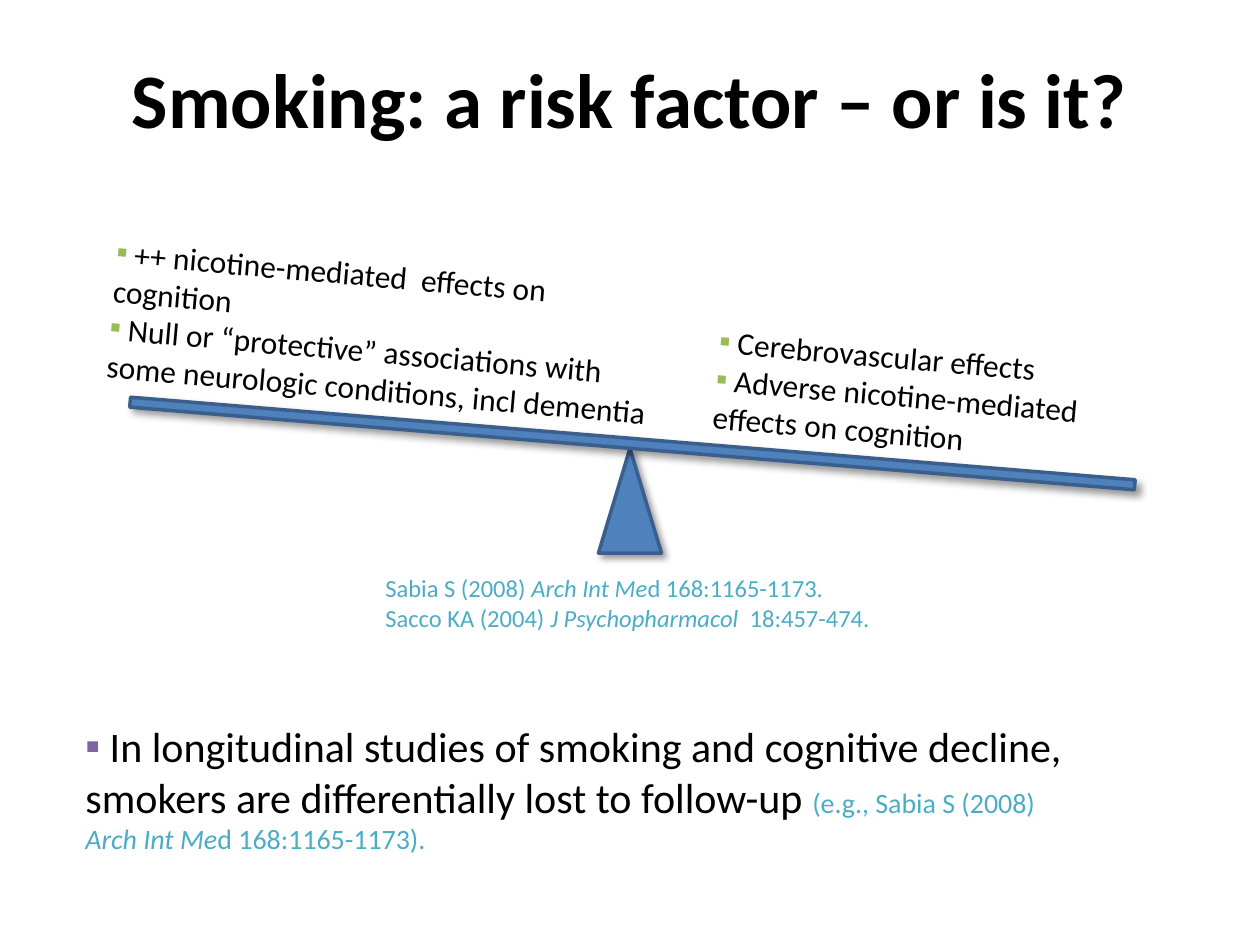
from lxml.etree import SubElement
from pptx import Presentation
from pptx.dml.color import RGBColor
from pptx.enum.shapes import MSO_SHAPE as Preset
from pptx.enum.text import MSO_ANCHOR as Anchor, PP_ALIGN as Align
from pptx.oxml.ns import qn
from pptx.util import Inches, Pt

THEME = {
    "font": "Calibri",
    "text": "000000", "cite": "4BACC6",
    "effect_bullet": "9BBB59", "study_bullet": "8064A2",
    "fill": "4F81BD", "line": "3A5F8C", "shadow": "000000",
    "title_size": 44, "study_size": 24, "effect_size": 18,
    "note_size": 16, "cite_size": 14,
}

TITLE = "Smoking: a risk factor – or is it?"
TITLE_BOX = (0.5, 0.3, 9, 0.95)

SEESAW = [
    (Preset.ISOSCELES_TRIANGLE, (4.75, 3.56, 0.5, 0.83), 0),
    (Preset.RECTANGLE, (1.02, 3.48, 8, 0.08), 4.7),
]

EFFECT = ("effect_size", "text", False)
STUDY = ("study_size", "text", False)
CITE = ("cite_size", "cite", False)
CITE_JOURNAL = ("cite_size", "cite", True)
NOTE = ("note_size", "cite", False)
NOTE_JOURNAL = ("note_size", "cite", True)

TEXTS = [
    ((0.78, 1.99, 4.58, 1.31), 5, "effect_bullet", [
        [(" ++ nicotine-mediated  effects on cognition", EFFECT)],
        [(" Null or “protective” associations with some neurologic conditions, incl dementia", EFFECT)],
    ]),
    ((5.58, 2.66, 3.76, 1.01), 5, "effect_bullet", [
        [(" Cerebrovascular effects", EFFECT)],
        [(" Adverse nicotine-mediated effects on cognition", EFFECT)],
    ]),
    ((2.96, 4.5, 4.12, 0.57), 0, None, [
        [("Sabia S (2008) ", CITE), ("Arch Int Me", CITE_JOURNAL), ("d 168:1165-1173.", CITE)],
        [("Sacco KA (2004) ", CITE), ("J Psychopharmacol  ", CITE_JOURNAL), ("18:457-474.", CITE)],
    ]),
    ((0.58, 5.67, 8.17, 1.58), 0, "study_bullet", [
        [(" In longitudinal studies of smoking and cognitive decline, "
          "smokers are differentially lost to follow-up ", STUDY),
         ("(e.g., Sabia S (2008) ", NOTE), ("Arch Int Me", NOTE_JOURNAL),
         ("d 168:1165-1173).", NOTE)],
    ]),
]


def color(name):
    return RGBColor.from_string(THEME[name])


def inches(box):
    return [Inches(value) for value in box]


def add_run(paragraph, text, size, color_name, italic=False, bold=False):
    run = paragraph.add_run()
    run.text = text
    run.font.name = THEME["font"]
    run.font.size = Pt(THEME[size])
    run.font.color.rgb = color(color_name)
    run.font.italic = italic
    run.font.bold = bold


def add_bullet(paragraph, color_name):
    properties = paragraph._p.get_or_add_pPr()
    bullet_color = SubElement(properties, qn("a:buClr"))
    SubElement(bullet_color, qn("a:srgbClr"), val=THEME[color_name])
    SubElement(properties, qn("a:buFont"), typeface=THEME["font"])
    SubElement(properties, qn("a:buChar"), char="▪")


def add_shadow(shape):
    shape.shadow.inherit = False
    effects = shape._element.spPr.find(qn("a:effectLst"))
    shadow = SubElement(effects, qn("a:outerShdw"), blurRad=str(Pt(4)),
                        dist=str(Pt(3)), dir=str(45 * 60000), rotWithShape="0")
    shade = SubElement(shadow, qn("a:srgbClr"), val=THEME["shadow"])
    SubElement(shade, qn("a:alpha"), val="40000")


def add_title(slide):
    title = slide.shapes.title
    title.left, title.top, title.width, title.height = inches(TITLE_BOX)
    title.text_frame.vertical_anchor = Anchor.MIDDLE
    paragraph = title.text_frame.paragraphs[0]
    paragraph.alignment = Align.CENTER
    add_run(paragraph, TITLE, "title_size", "text", bold=True)


def add_seesaw_part(slide, preset, box, rotation):
    shape = slide.shapes.add_shape(preset, *inches(box))
    shape.rotation = rotation
    shape.fill.solid()
    shape.fill.fore_color.rgb = color("fill")
    shape.line.color.rgb = color("line")
    shape.line.width = Pt(2)
    add_shadow(shape)


def add_text(slide, box, rotation, bullet, paragraphs):
    shape = slide.shapes.add_textbox(*inches(box))
    shape.rotation = rotation
    frame = shape.text_frame
    frame.word_wrap = True
    for index, runs in enumerate(paragraphs):
        paragraph = frame.add_paragraph() if index else frame.paragraphs[0]
        if bullet:
            add_bullet(paragraph, bullet)
        for text, style in runs:
            add_run(paragraph, text, *style)


def main():
    presentation = Presentation()
    presentation.slide_width, presentation.slide_height = inches((10, 7.5))
    slide = presentation.slides.add_slide(presentation.slide_layouts[5])
    add_title(slide)
    for part in SEESAW:
        add_seesaw_part(slide, *part)
    for text in TEXTS:
        add_text(slide, *text)
    presentation.save("out.pptx")


if __name__ == "__main__":
    main()
